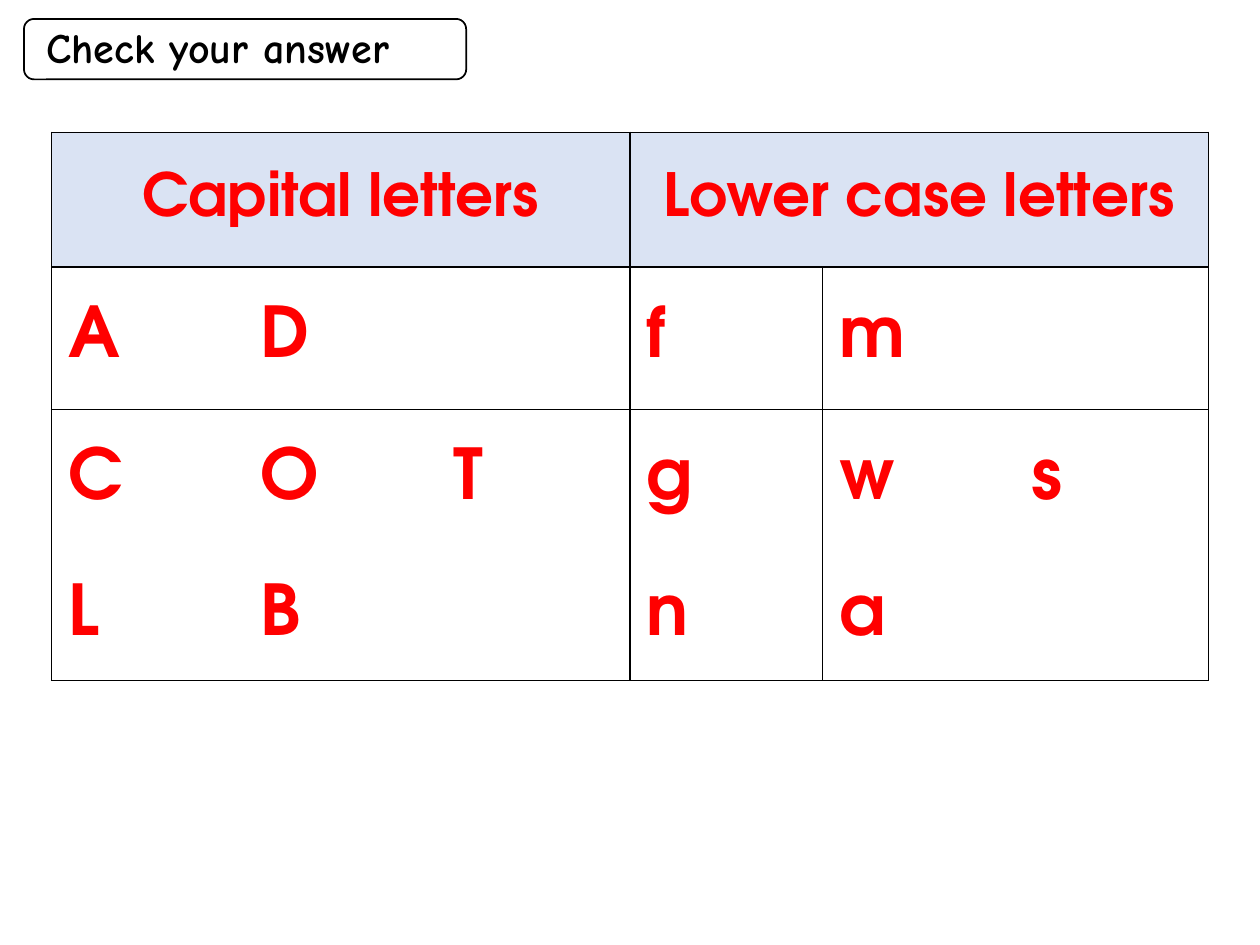
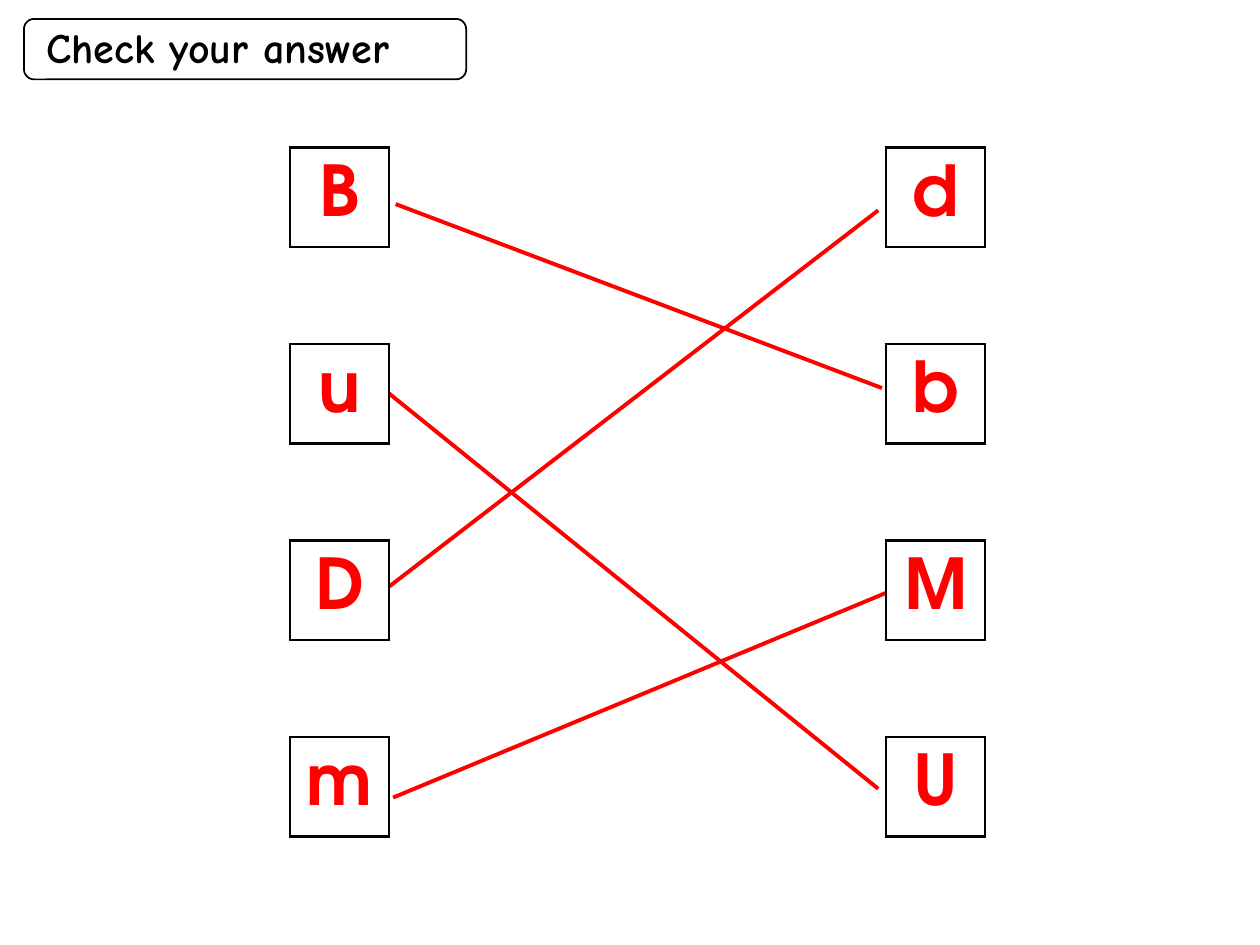
from dataclasses import dataclass
from typing import NamedTuple

from lxml.etree import SubElement
from pptx import Presentation
from pptx.dml.color import RGBColor as Rgb
from pptx.enum.shapes import MSO_CONNECTOR as Link, MSO_SHAPE as Shape
from pptx.enum.text import MSO_ANCHOR as Anchor, MSO_AUTO_SIZE as Auto, PP_ALIGN as Align
from pptx.oxml.ns import qn
from pptx.util import Inches, Pt


@dataclass(frozen=True)
class Theme:
    ink: str = "000000"
    red: str = "FF0000"
    white: str = "FFFFFF"
    head: str = "DAE3F3"
    font: str = "TeX Gyre Adventor"
    hand: str = "Comic Neue"
    title: float = 24
    label: float = 34
    letter: float = 40
    thin: float = 1
    frame: float = 1.5
    match: float = 2.25
    plain: str = "{2D5ABB26-0587-4C30-8999-92F81FD0307C}"


class Match(NamedTuple):
    x1: float
    y1: float
    x2: float
    y2: float


class Grid(NamedTuple):
    left: float
    top: float
    cols: list[float]
    rows: list[float]


THEME = Theme()
HEADS = ["Capital letters", "Lower case letters"]
ROWS = [["A", "D", "", "f", "m", ""],
        ["C", "O", "T", "g", "w", "s"],
        ["L", "B", "", "n", "a", ""]]
SORT = Grid(0.41, 1.05, [1.53] * 6, [1.07, 1.13, 1.13, 1.02])
BOX, GAP = 0.79, 0.77
PAIRS = [("B", "d"), ("u", "b"), ("D", "M"), ("m", "U")]
JOIN = Grid(2.3, 1.17, [BOX, 3.94, BOX], [BOX, GAP] * 3 + [BOX])
LINES = [Match(3.14, 1.62, 7, 3.08), Match(3.01, 3.06, 6.97, 6.26),
         Match(3.07, 4.67, 6.97, 1.67), Match(3.12, 6.33, 7.07, 4.69)]


def write(frame, text: str, size: float = THEME.letter, font: str = THEME.font,
          color: str = THEME.red, align=Align.CENTER) -> None:
    para = frame.paragraphs[0]
    para.alignment = align
    run = para.add_run()
    run.text = text
    run.font.size = Pt(size)
    run.font.name = font
    run.font.bold = True
    run.font.color.rgb = Rgb.from_string(color)


def add_title(slide) -> None:
    box = slide.shapes.add_shape(Shape.ROUNDED_RECTANGLE, Inches(0.19), Inches(0.15),
                                 Inches(3.51), Inches(0.48))
    box.shadow.inherit = False
    box.fill.background()
    box.line.color.rgb = Rgb.from_string(THEME.ink)
    box.line.width = Pt(THEME.thin)
    frame = slide.shapes.add_textbox(Inches(0.27), Inches(0.12),
                                     Inches(3.43), Inches(0.5)).text_frame
    frame.word_wrap = True
    frame.auto_size = Auto.SHAPE_TO_FIT_TEXT
    write(frame, "Check your answer", size=THEME.title, font=THEME.hand,
          color=THEME.ink, align=Align.JUSTIFY)


def add_line(slide, match: Match) -> None:
    line = slide.shapes.add_connector(Link.STRAIGHT, *map(Inches, match))
    line.line.color.rgb = Rgb.from_string(THEME.red)
    line.line.width = Pt(THEME.match)
    SubElement(line._element.spPr, qn("a:effectLst"))


def add_grid(slide, grid: Grid):
    shape = slide.shapes.add_table(len(grid.rows), len(grid.cols), Inches(grid.left),
                                   Inches(grid.top), Inches(sum(grid.cols)),
                                   Inches(sum(grid.rows)))
    table = shape.table
    table.first_row = table.horz_banding = False
    table._tbl.tblPr.find(qn("a:tableStyleId")).text = THEME.plain
    for col, width in zip(table.columns, grid.cols):
        col.width = Inches(width)
    for row, height in zip(table.rows, grid.rows):
        row.height = Inches(height)
    return table


def style(cell, sides: str, width: float, fill: str = "") -> None:
    cell.vertical_anchor = Anchor.MIDDLE
    props = cell._tc.get_or_add_tcPr()
    for side in "LRTB":
        if side in sides:
            line = SubElement(props, qn(f"a:ln{side}"), w=str(Pt(width)))
            paint = SubElement(line, qn("a:solidFill"))
            SubElement(paint, qn("a:srgbClr"), val=THEME.ink)
    if fill:
        cell.fill.solid()
        cell.fill.fore_color.rgb = Rgb.from_string(fill)
    else:
        cell.fill.background()


def pad(cell) -> None:
    cell.margin_left = cell.margin_right = Inches(0.13)
    cell.margin_top = cell.margin_bottom = Inches(0.06)


def draw_sort(slide) -> None:
    table = add_grid(slide, SORT)
    for col in range(6):
        style(table.cell(0, col), "LRTB", THEME.thin, THEME.head)
    for part, text in enumerate(HEADS):
        cell = table.cell(0, part * 3)
        cell.merge(table.cell(0, part * 3 + 2))
        pad(cell)
        write(cell.text_frame, text, size=THEME.label)
    for row, texts in enumerate(ROWS, 1):
        for col, text in enumerate(texts):
            cell = table.cell(row, col)
            sides = ("L", "", "R")[col % 3] + ("T", "", "B")[row - 1]
            style(cell, sides, THEME.thin, THEME.white)
            pad(cell)
            if text:
                write(cell.text_frame, text, align=Align.LEFT)
    add_title(slide)


def draw_join(slide) -> None:
    add_title(slide)
    for match in LINES:
        add_line(slide, match)
    table = add_grid(slide, JOIN)
    for row in range(len(JOIN.rows)):
        gap = row % 2
        style(table.cell(row, 1), "" if gap else "LR", THEME.frame)
        for col, side in ((0, 0), (2, 1)):
            cell = table.cell(row, col)
            if gap:
                style(cell, "TB", THEME.frame)
            else:
                style(cell, "LRTB", THEME.frame, THEME.white)
                write(cell.text_frame, PAIRS[row // 2][side])


def main() -> None:
    deck = Presentation()
    deck.slide_width, deck.slide_height = Inches(10), Inches(7.5)
    for draw in (draw_sort, draw_join):
        draw(deck.slides.add_slide(deck.slide_layouts[6]))
    deck.save("out.pptx")


if __name__ == "__main__":
    main()
